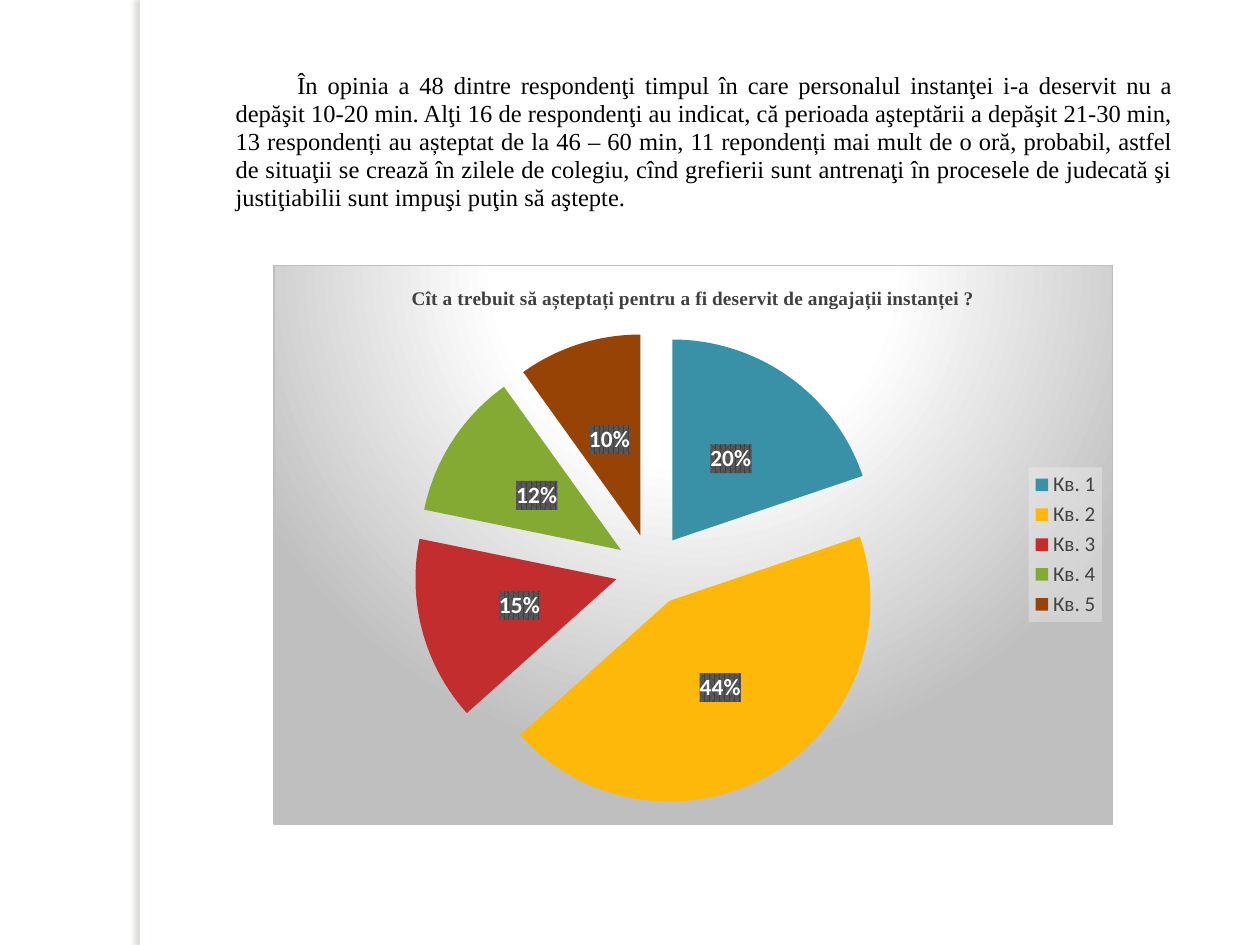
from pptx import Presentation
from pptx.chart.data import CategoryChartData
from pptx.dml.color import RGBColor
from pptx.enum.chart import XL_CHART_TYPE, XL_LABEL_POSITION, XL_LEGEND_POSITION
from pptx.enum.shapes import MSO_SHAPE
from pptx.enum.text import PP_ALIGN
from pptx.oxml import parse_xml
from pptx.oxml.ns import nsdecls
from pptx.util import Pt

PIE = XL_CHART_TYPE.PIE
CENTER = XL_LABEL_POSITION.CENTER
RIGHT = XL_LEGEND_POSITION.RIGHT
RECT = MSO_SHAPE.RECTANGLE
JUSTIFY = PP_ALIGN.JUSTIFY

BODY = (
    "În opinia a 48 dintre respondenţi timpul în care personalul instanţei "
    "i-a deservit nu a depăşit 10-20 min. Alţi 16 de respondenţi au indicat, "
    "că perioada aşteptării a depăşit 21-30 min, 13 respondenți au așteptat "
    "de la 46 – 60 min, 11 repondenți mai mult de o oră, probabil, astfel de "
    "situaţii se crează în zilele de colegiu, cînd grefierii sunt antrenaţi "
    "în procesele de judecată şi justiţiabilii sunt impuşi puţin să aştepte. "
)
TITLE = "Cît a trebuit să așteptați pentru a fi deservit de angajații instanței ?"
SLICES = [
    ("Кв. 1", 20, "3891A7"),
    ("Кв. 2", 44, "FEB80A"),
    ("Кв. 3", 15, "C32D2E"),
    ("Кв. 4", 12, "84AA33"),
    ("Кв. 5", 10, "964305"),
]

THEME = {
    "serif": "Times New Roman", "sans": "Calibri",
    "ink": "000000", "gray": "404040", "white": "FFFFFF",
    "edge": "BFBFBF", "shade": "736F63", "key": "F2F2F2", "tag": "595959",
    "body": 14, "title": 11, "legend": 12, "label": 13.3, "base": 10,
}
SIZE = (720, 540)
STRIP = (80, 0, 5.76, 540)
TEXT = (127.5, 37.5, 550, 88)
CHART = (156.2, 151.2, 480, 320)
INDENT, LEADING, EXPLODE = 35.3, 16, 18


def set_font(font, size, face="sans", color="ink", bold=False):
    font.size = Pt(THEME[size])
    font.name = THEME[face]
    font.color.rgb = RGBColor.from_string(THEME[color])
    font.bold = bold


def add_text(frame, text, align=None, indent=0, leading=None, **style):
    para = frame.paragraphs[0]
    if align is not None:
        para.alignment = align
    if leading:
        para.line_spacing = Pt(leading)
    if indent:
        props = para._p.get_or_add_pPr()
        props.set("marL", "0")
        props.set("indent", str(Pt(indent)))
    run = para.add_run()
    run.text = text
    set_font(run.font, **style)


def place(box):
    return [Pt(n) for n in box]


def tint(name, inner=""):
    return f'<a:srgbClr val="{THEME[name]}">{inner}</a:srgbClr>'


def add_strip(slide):
    strip = slide.shapes.add_shape(RECT, *place(STRIP))
    strip.fill.solid()
    strip.fill.fore_color.rgb = RGBColor.from_string(THEME["white"])
    strip.line.fill.background()
    color = tint("shade", '<a:alpha val="25000"/>')
    strip._element.spPr.append(parse_xml(
        f'<a:effectLst {nsdecls("a")}><a:outerShdw blurRad="{Pt(3)}" '
        f'dist="{Pt(3)}" dir="10800000" algn="tl" rotWithShape="0">'
        f'{color}</a:outerShdw></a:effectLst>'))


def paint(chart, spot, fill):
    text = chart.element.xpath(spot + "/c:txPr")[0]
    text.addprevious(parse_xml(
        f'<c:spPr {nsdecls("c", "a")}>{fill}</c:spPr>'))


def add_pie(slide):
    data = CategoryChartData()
    data.categories = [name for name, _, _ in SLICES]
    data.add_series("Series 1", [num for _, num, _ in SLICES])
    chart = slide.shapes.add_chart(PIE, *place(CHART), data).chart
    set_font(chart.font, "base")
    chart.has_title = True
    add_text(chart.chart_title.text_frame, TITLE, size="title",
             face="serif", color="gray", bold=True)
    chart.chart_title.include_in_layout = False

    chart.has_legend = True
    chart.legend.position = RIGHT
    chart.legend.include_in_layout = False
    set_font(chart.legend.font, "legend", color="gray")

    plot = chart.plots[0]
    plot.vary_by_categories = True
    series = plot.series[0]
    for i, (_, _, color) in enumerate(SLICES):
        fill = series.points[i].format.fill
        fill.solid()
        fill.fore_color.rgb = RGBColor.from_string(color)
    chart.element.xpath(".//c:ser/c:tx")[0].addnext(parse_xml(
        f'<c:explosion {nsdecls("c")} val="{EXPLODE}"/>'))

    labels = series.data_labels
    labels.show_percentage = True
    labels.show_value = False
    labels.position = CENTER
    set_font(labels.font, "label", color="white", bold=True)

    stops = "".join(
        f'<a:gs pos="{pos * 1000}">{tint(name)}</a:gs>'
        for pos, name in ((0, "white"), (39, "white"), (100, "edge")))
    paint(chart, ".", (
        f'<a:gradFill><a:gsLst>{stops}</a:gsLst><a:path path="circle">'
        '<a:fillToRect l="50000" t="-80000" r="50000" b="180000"/>'
        f'</a:path></a:gradFill><a:ln w="{Pt(0.75)}"><a:solidFill>'
        f'{tint("edge")}</a:solidFill></a:ln>'))
    clear = tint("key", '<a:alpha val="39000"/>')
    paint(chart, "c:chart/c:legend", f'<a:solidFill>{clear}</a:solidFill>')
    paint(chart, ".//c:ser/c:dLbls", (
        f'<a:pattFill prst="pct75"><a:fgClr>{tint("gray")}</a:fgClr>'
        f'<a:bgClr>{tint("tag")}</a:bgClr></a:pattFill>'))


def main():
    deck = Presentation()
    deck.slide_width, deck.slide_height = place(SIZE)
    slide = deck.slides.add_slide(deck.slide_layouts[6])
    add_strip(slide)
    frame = slide.shapes.add_textbox(*place(TEXT)).text_frame
    frame.word_wrap = True
    add_text(frame, BODY, align=JUSTIFY, indent=INDENT, leading=LEADING,
             size="body", face="serif")
    add_pie(slide)
    deck.save("out.pptx")


if __name__ == "__main__":
    main()
